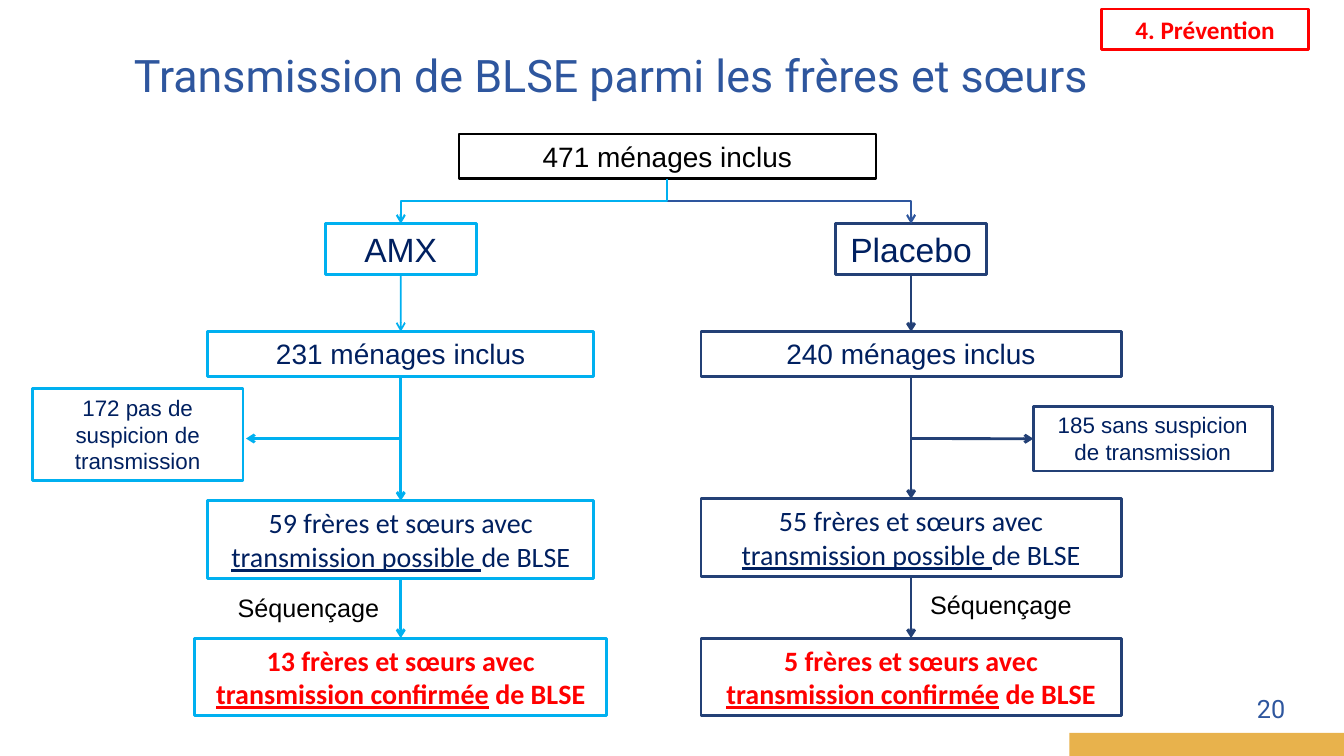
"""Build the flow chart of BLSE transmission among siblings."""
from dataclasses import dataclass
from typing import Optional

from lxml import etree
from pptx import Presentation
from pptx import util as u
from pptx.dml.color import RGBColor
from pptx.enum import shapes, text
from pptx.oxml.ns import qn
from pptx.util import Cm, Pt

TOP, LEFT, BOTTOM = 0, 1, 2
AMX_AXIS, PLACEBO_AXIS = 10.1, 22.96


@dataclass(frozen=True)
class Theme:
    """Colours and type sizes."""
    black: str = "000000"
    white: str = "FFFFFF"
    red: str = "FF0000"
    ink: str = "002060"
    cyan: str = "00B0F0"
    navy: str = "234076"
    blue: str = "2E569E"
    gold: str = "E8B24C"
    title: int = 32
    arm: int = 24
    step: int = 20
    label: int = 18
    side: int = 16


THEME = Theme()


@dataclass(frozen=True)
class Style:
    """Font of a paragraph."""
    size: int
    color: str
    name: str = "Arial"
    bold: bool = False


COUNT = Style(THEME.step, THEME.ink)
ARM = Style(THEME.arm, THEME.ink)
SIDE = Style(THEME.side, THEME.ink)
POSSIBLE = Style(THEME.step, THEME.ink, "Calibri")
CONFIRMED = Style(THEME.step, THEME.red, "Calibri", True)
HEADING = Style(THEME.title, THEME.blue, "Roboto")
PAGE = Style(THEME.label, THEME.blue, "Roboto")
LABEL = Style(THEME.label, THEME.black)


@dataclass(frozen=True)
class Box:
    """Framed text centred on an axis; odd phrases are underlined."""
    axis: float
    top: float
    width: float
    height: float
    phrases: tuple[str, ...]
    style: Style
    line: str
    weight: float = 2
    fill: Optional[str] = None


@dataclass(frozen=True)
class Arm:
    """One treatment arm, from its name down to its confirmed cases."""
    steps: tuple[Box, ...]
    weights: tuple[float, ...]
    fork_color: str


def possible(axis: float, top: float, width: float, count: int, line: str) -> Box:
    """Describe a box of possible transmissions."""
    phrases = (f"{count} frères et sœurs avec ", "transmission possible ", "de BLSE")
    return Box(axis, top, width, 1.96, phrases, POSSIBLE, line, fill=THEME.white)


def confirmed(axis: float, width: float, count: int, line: str) -> Box:
    """Describe a box of confirmed transmissions."""
    phrases = (f"{count} frères et sœurs avec ", "transmission confirmée", " de BLSE")
    return Box(axis, 16.08, width, 1.96, phrases, CONFIRMED, line, fill=THEME.white)


HOUSEHOLDS = Box(16.82, 3.38, 10.52, 1.12, ("471 ménages inclus",),
                 Style(THEME.step, THEME.black), THEME.black, 1.5)
AMX = Arm((
    Box(AMX_AXIS, 5.64, 3.81, 1.27, ("AMX",), ARM, THEME.cyan, 2.25),
    Box(AMX_AXIS, 8.36, 9.73, 1.12, ("231 ménages inclus",), COUNT, THEME.cyan),
    possible(AMX_AXIS, 12.62, 9.73, 59, THEME.cyan),
    confirmed(AMX_AXIS, 10.39, 13, THEME.cyan),
), (1.25, 2, 2), THEME.cyan)
PLACEBO = Arm((
    Box(PLACEBO_AXIS, 5.64, 3.81, 1.27, ("Placebo",), ARM, THEME.navy),
    Box(PLACEBO_AXIS, 8.36, 10.59, 1.12, ("240 ménages inclus",), COUNT, THEME.navy),
    possible(PLACEBO_AXIS, 12.57, 10.59, 55, THEME.navy),
    confirmed(PLACEBO_AXIS, 10.59, 5, THEME.navy),
), (2, 2, 2), THEME.blue)
AMX_EXCLUDED = Box(3.47, 9.8, 5.31, 2.31, ("172 pas de suspicion de transmission",),
                   SIDE, THEME.cyan)
PLACEBO_EXCLUDED = Box(29.05, 10.24, 6.02, 1.63, ("185 sans suspicion de transmission",),
                       SIDE, THEME.navy)
CHAPTER = Box(30.37, 0.23, 5.21, 1.02, ("4. Prévention",),
              Style(THEME.label, THEME.red, "Calibri", True), THEME.red, fill=THEME.white)


def set_font(paragraph, style: Style) -> None:
    """Apply a style to a paragraph."""
    font = paragraph.font
    font.name, font.size, font.bold = style.name, Pt(style.size), style.bold
    font.color.rgb = RGBColor.from_string(style.color)


def draw_box(slide, box: Box):
    """Draw a framed text."""
    frame = slide.shapes.add_shape(
        shapes.MSO_SHAPE.RECTANGLE, Cm(box.axis - box.width / 2), Cm(box.top),
        Cm(box.width), Cm(box.height))
    frame.shadow.inherit = False
    if box.fill:
        frame.fill.solid()
        frame.fill.fore_color.rgb = RGBColor.from_string(box.fill)
    else:
        frame.fill.background()
    frame.line.color.rgb = RGBColor.from_string(box.line)
    frame.line.width = Pt(box.weight)
    body = frame.text_frame
    body.word_wrap = True
    body.auto_size = text.MSO_AUTO_SIZE.SHAPE_TO_FIT_TEXT
    body.vertical_anchor = text.MSO_ANCHOR.TOP
    paragraph = body.paragraphs[0]
    paragraph.alignment = text.PP_ALIGN.CENTER
    for index, phrase in enumerate(box.phrases):
        run = paragraph.add_run()
        run.text = phrase
        if index % 2:
            run.font.underline = True
    set_font(paragraph, box.style)
    return frame


def draw_arrow(slide, start: tuple[float, float], end: tuple[float, float],
               color: str, weight: float, kind=shapes.MSO_CONNECTOR.STRAIGHT):
    """Draw a connector with an open arrowhead at its end."""
    arrow = slide.shapes.add_connector(kind, *(Cm(value) for value in start + end))
    arrow.line.color.rgb = RGBColor.from_string(color)
    arrow.line.width = Pt(weight)
    outline = arrow._element.spPr.find(qn("a:ln"))
    etree.SubElement(outline, qn("a:tailEnd"), type="arrow")
    etree.SubElement(arrow._element.spPr, qn("a:effectLst"))
    return arrow


def draw_fork(slide, source, target, arm: Arm) -> None:
    """Lead from all households down to one arm by a bent arrow."""
    start = (HOUSEHOLDS.axis, HOUSEHOLDS.top + HOUSEHOLDS.height)
    end = (arm.steps[0].axis, arm.steps[0].top)
    arrow = draw_arrow(slide, start, end, arm.fork_color, 1.5, shapes.MSO_CONNECTOR.ELBOW)
    arrow.begin_connect(source, BOTTOM)
    arrow.end_connect(target, TOP)
    drop, spread = end[1] - start[1], abs(end[0] - start[0])
    arrow.left = Cm((start[0] + end[0] - drop) / 2)
    arrow.top = Cm((start[1] + end[1] - spread) / 2)
    arrow.width, arrow.height = Cm(drop), Cm(spread)
    to_right = end[0] > start[0]
    xfrm = arrow._element.spPr.find(qn("a:xfrm"))
    xfrm.set("rot", str((270 if to_right else 90) * 60000))
    xfrm.set("flipH", str(int(to_right)))


def draw_arm(slide, source, arm: Arm) -> None:
    """Draw the boxes of an arm and the arrows between them."""
    frames = [draw_box(slide, step) for step in arm.steps]
    draw_fork(slide, source, frames[0], arm)
    for index, weight in enumerate(arm.weights):
        upper, lower = arm.steps[index:index + 2]
        arrow = draw_arrow(slide, (upper.axis, upper.top + upper.height),
                           (lower.axis, lower.top), upper.line, weight)
        arrow.begin_connect(frames[index], BOTTOM)
        arrow.end_connect(frames[index + 1], TOP)


def draw_text(slide, left: float, top: float, width: float, wording: str, style: Style):
    """Draw a one-line text and return its paragraph."""
    body = slide.shapes.add_textbox(Cm(left), Cm(top), Cm(width), Cm(1.02)).text_frame
    body.word_wrap = True
    paragraph = body.paragraphs[0]
    paragraph.text = wording
    set_font(paragraph, style)
    return paragraph


def main() -> None:
    """Build and save the slide."""
    deck = Presentation()
    deck.slide_width, deck.slide_height = u.Cm(33.87), u.Cm(19.05)
    slide = deck.slides.add_slide(deck.slide_layouts[5])

    title = slide.shapes.title
    title.left, title.top, title.width, title.height = Cm(3.12), Cm(1.24), Cm(30.73), Cm(8.84)
    title.text_frame.text = "Transmission de BLSE parmi les frères et sœurs"
    title.text_frame.auto_size = text.MSO_AUTO_SIZE.NONE
    title.text_frame.vertical_anchor = text.MSO_ANCHOR.TOP
    heading = title.text_frame.paragraphs[0]
    heading.alignment, heading.line_spacing = text.PP_ALIGN.LEFT, 0.9
    set_font(heading, HEADING)

    page = draw_text(slide, 30.53, 17.42, 2.11, "20", PAGE)
    page.alignment, page.line_spacing = text.PP_ALIGN.RIGHT, 0.9
    band = slide.shapes.add_shape(shapes.MSO_SHAPE.RECTANGLE, Cm(26.95), Cm(18.47), Cm(6.92), Cm(0.58))
    band.shadow.inherit = False
    band.fill.solid()
    band.fill.fore_color.rgb = RGBColor.from_string(THEME.gold)
    band.line.fill.background()

    households = draw_box(slide, HOUSEHOLDS)
    for arm in (PLACEBO, AMX):
        draw_arm(slide, households, arm)
    draw_box(slide, AMX_EXCLUDED)
    draw_arrow(slide, (AMX_AXIS, 11.05), (6.2, 11.05), THEME.cyan, 2)
    excluded = draw_box(slide, PLACEBO_EXCLUDED)
    exit_arrow = draw_arrow(slide, (PLACEBO_AXIS, 11.05), (26.04, 11.05), THEME.navy, 2)
    exit_arrow.end_connect(excluded, LEFT)
    draw_box(slide, CHAPTER)
    for left, top in ((5.74, 14.81), (23.19, 14.73)):
        draw_text(slide, left, top, 7.44, "Séquençage", LABEL)
    deck.save("out.pptx")


if __name__ == "__main__":
    main()
